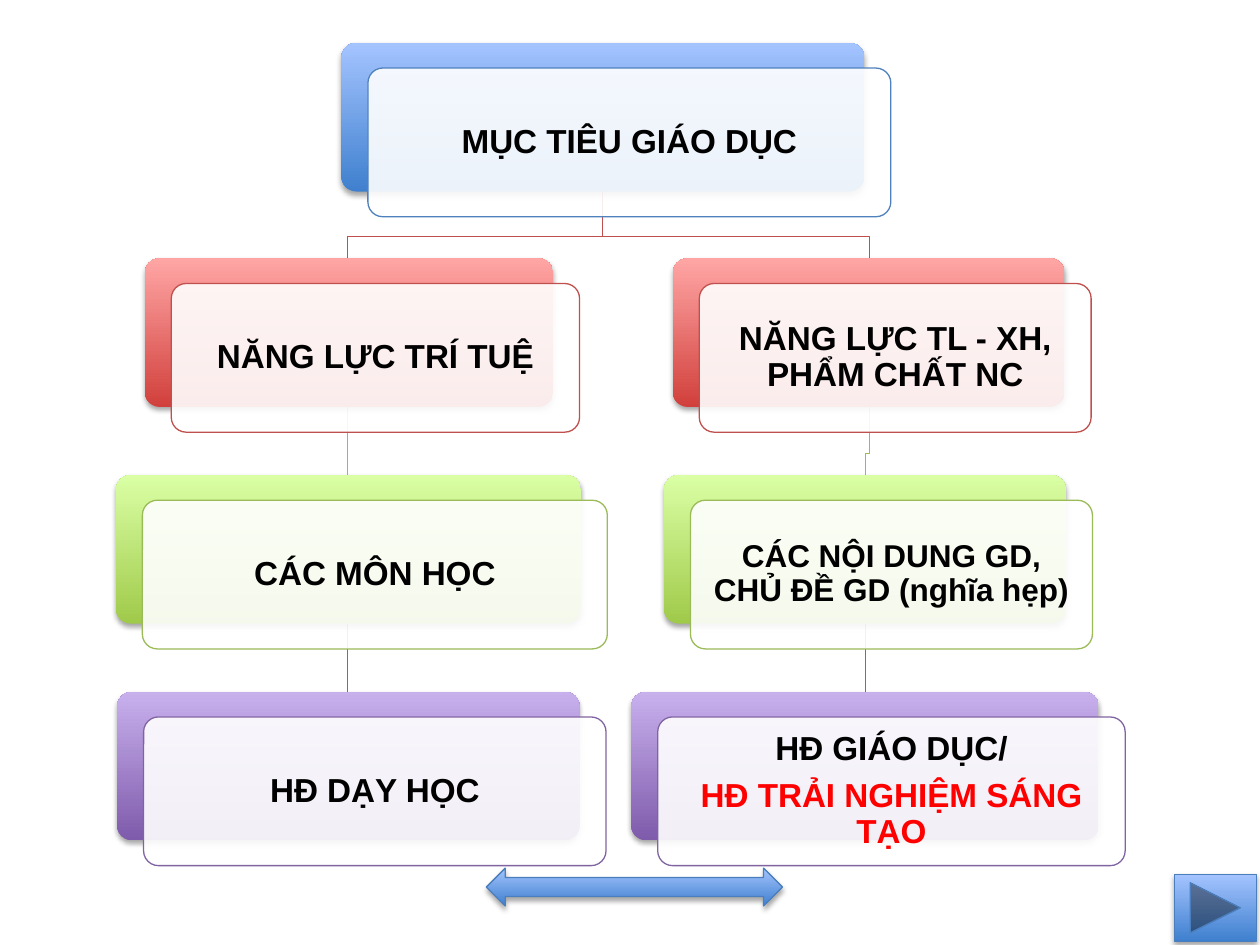
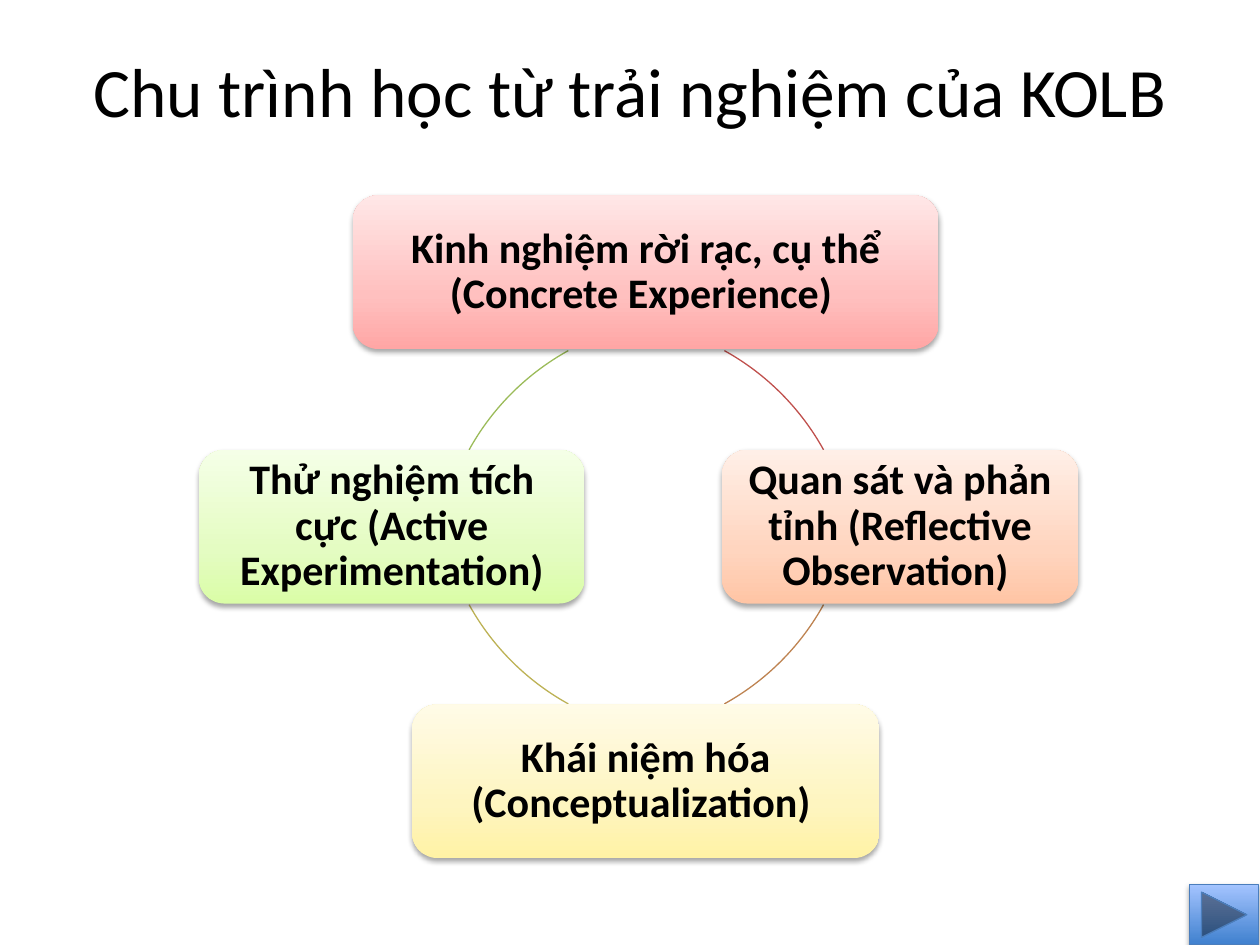
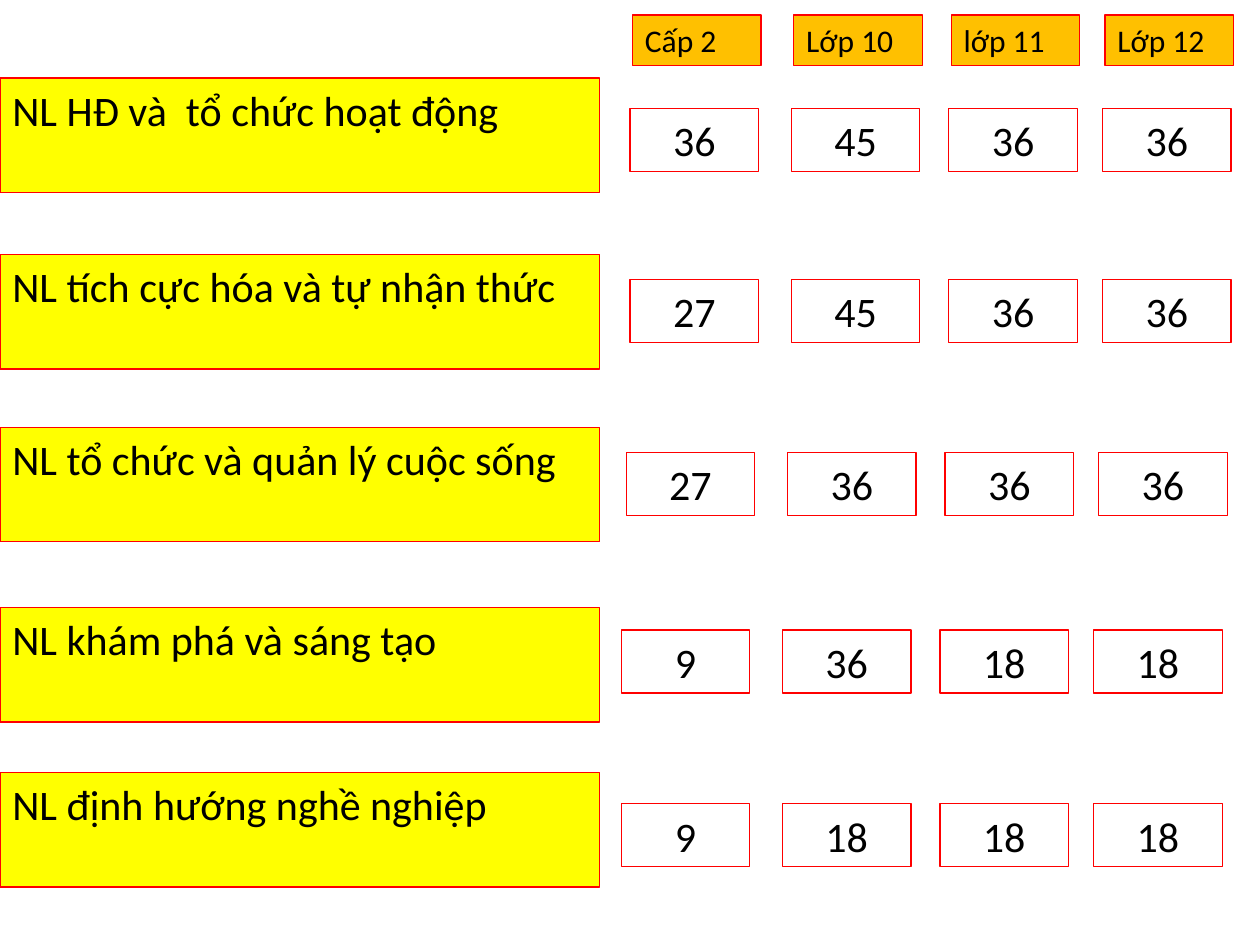
import lxml.etree
import pptx
import pptx.dml.color
import pptx.enum.shapes
import pptx.enum.text
import pptx.oxml.ns
import pptx.util

RGBColor = pptx.dml.color.RGBColor
Shapes = pptx.enum.shapes.MSO_SHAPE
Align = pptx.enum.text.PP_ALIGN
Anchor = pptx.enum.text.MSO_ANCHOR
qn = pptx.oxml.ns.qn

PX = 9144

BLACK = RGBColor(0x00, 0x00, 0x00)
WHITE = RGBColor(0xFF, 0xFF, 0xFF)
RED = RGBColor(0xFF, 0x00, 0x00)
YELLOW = RGBColor(0xFF, 0xFF, 0x00)
AMBER = RGBColor(0xFF, 0xC0, 0x00)

BLUE_LINE = RGBColor(0x4F, 0x81, 0xBD)
BUTTON_LINE = RGBColor(0x4B, 0x7E, 0xBC)
RED_LINE = RGBColor(0xC0, 0x50, 0x4D)
GREEN_LINE = RGBColor(0x9B, 0xBB, 0x59)
PURPLE_LINE = RGBColor(0x80, 0x64, 0xA2)
ORANGE_LINE = RGBColor(0xBE, 0x83, 0x51)
OLIVE_LINE = RGBColor(0xBD, 0xB2, 0x55)

BLUE_BLEND = [(0, RGBColor(0x3F, 0x80, 0xCE)), (100, RGBColor(0xA4, 0xC4, 0xFF))]
RED_BLEND = [(0, RGBColor(0xD1, 0x40, 0x3C)), (100, RGBColor(0xFF, 0xA6, 0xA5))]
GREEN_BLEND = [(0, RGBColor(0xA0, 0xCA, 0x4A)), (100, RGBColor(0xDA, 0xFF, 0xA5))]
PURPLE_BLEND = [(0, RGBColor(0x7F, 0x5B, 0xAB)), (100, RGBColor(0xC8, 0xB0, 0xED))]
PALE_RED = [(0, RGBColor(0xFF, 0xA6, 0xA5)), (35, RGBColor(0xFF, 0xC0, 0xBF)),
            (100, RGBColor(0xFF, 0xE7, 0xE7))]
PALE_ORANGE = [(0, RGBColor(0xFF, 0xC5, 0xA5)), (35, RGBColor(0xFF, 0xD5, 0xBF)),
               (100, RGBColor(0xFF, 0xEF, 0xE7))]
PALE_YELLOW = [(0, RGBColor(0xFF, 0xF2, 0xA5)), (35, RGBColor(0xFE, 0xF5, 0xC0)),
               (100, RGBColor(0xFF, 0xFB, 0xE7))]
PALE_GREEN = [(0, RGBColor(0xDA, 0xFD, 0xA7)), (35, RGBColor(0xE4, 0xFC, 0xC2)),
              (100, RGBColor(0xF5, 0xFF, 0xE7))]


def scaled(*lengths):
    return [pptx.util.Emu(length * PX) for length in lengths]


def set_line(shape, colour):
    if colour is None:
        shape.line.fill.background()
    else:
        shape.line.color.rgb = colour
        shape.line.width = pptx.util.Pt(0.75)


def add_colour(parent, colour, alpha=None):
    element = lxml.etree.SubElement(parent, qn("a:srgbClr"), val=str(colour))
    if alpha is not None:
        lxml.etree.SubElement(element, qn("a:alpha"), val=str(alpha * 1000))


def add_figure(page, kind, place, line=None):
    shape = page.shapes.add_shape(kind, *scaled(*place))
    shape.shadow.inherit = False
    set_line(shape, line)
    return shape


def add_solid(page, kind, place, colour, line=None):
    shape = add_figure(page, kind, place, line)
    shape.fill.solid()
    shape.fill.fore_color.rgb = colour
    return shape


def add_raised(page, kind, place, blend, line=None):
    shape = add_figure(page, kind, place, line)
    shape.fill.gradient()
    shape.fill.gradient_angle = 90
    properties = shape._element.spPr
    stops = properties.find(".//" + qn("a:gsLst"))
    stops.clear()
    for position, colour in blend:
        stop = lxml.etree.SubElement(stops, qn("a:gs"), pos=str(position * 1000))
        add_colour(stop, colour)
    shadow = lxml.etree.SubElement(
        properties.find(qn("a:effectLst")), qn("a:outerShdw"),
        blurRad=str(pptx.util.Pt(3.1)), dist=str(pptx.util.Pt(1.8)),
        dir="5400000", rotWithShape="0")
    add_colour(shadow, BLACK, 35)
    return shape


def format_para(para, text, size, font="Calibri", colour=BLACK, bold=False, align=Align.LEFT):
    para.text = text
    para.alignment = align
    para.font.name = font
    para.font.size = pptx.util.Pt(size)
    para.font.bold = bold
    para.font.color.rgb = colour


def write_diagram_text(shape, lines, size, font, margin):
    frame = shape.text_frame
    frame.word_wrap = True
    frame.vertical_anchor = Anchor.MIDDLE
    (frame.margin_left, frame.margin_top,
     frame.margin_right, frame.margin_bottom) = scaled(*[margin] * 4)
    for index, (text, colour) in enumerate(lines):
        para = frame.add_paragraph() if index else frame.paragraphs[0]
        format_para(para, text, size, font, colour, True, Align.CENTER)
        para.line_spacing = 0.9
        para.space_after = pptx.util.Pt(0.35 * size)


def add_card(page, left, top, width, blend, line, lines, size=19):
    back = add_raised(page, Shapes.ROUNDED_RECTANGLE, (left, top, width, 118), blend)
    front = add_solid(page, Shapes.ROUNDED_RECTANGLE,
                      (left + 21, top + 20, width, 118), WHITE, line)
    back.adjustments[0] = front.adjustments[0] = 0.1
    white = front._element.spPr.find(qn("a:solidFill")).find(qn("a:srgbClr"))
    lxml.etree.SubElement(white, qn("a:alpha"), val="90000")
    write_diagram_text(front, lines, size, "Arial", 8)


def add_straight_link(page, x, top, bottom, colour):
    link = page.shapes.add_connector(
        pptx.enum.shapes.MSO_CONNECTOR.STRAIGHT, *scaled(x, top, x, bottom))
    set_line(link, colour)
    lxml.etree.SubElement(link._element.spPr, qn("a:effectLst"))


def add_bent_link(page, start, middle, end, colour):
    builder = page.shapes.build_freeform(*start, scale=PX)
    builder.add_line_segments([(start[0], middle), (end[0], middle), end], close=False)
    link = builder.convert_to_shape()
    link.shadow.inherit = False
    link.fill.background()
    set_line(link, colour)


def add_arc(page, left, top, start, colour):
    arc = add_figure(page, Shapes.ARC, (left, top, 404, 404), colour)
    arc.fill.background()
    arc.adjustments[0] = start * 0.6
    arc.adjustments[1] = (start + 32) * 0.6


def add_next_button(page, place):
    add_raised(page, Shapes.ACTION_BUTTON_FORWARD_OR_NEXT, place, BLUE_BLEND, BUTTON_LINE)


def add_text_cell(page, place, text, colour, size, align=Align.LEFT):
    cell = add_solid(page, Shapes.RECTANGLE, place, colour, RED)
    cell.text_frame.word_wrap = True
    cell.text_frame.vertical_anchor = Anchor.TOP
    format_para(cell.text_frame.paragraphs[0], text, size, align=align)


def build_goals(deck):
    page = deck.slides.add_slide(deck.slide_layouts[6])
    goal_top, ability_top, content_top, activity_top = 34, 205, 377, 549
    for x in (276, 690):
        add_bent_link(page, (478, 152), 188, (x, ability_top), RED_LINE)
    add_straight_link(page, 276, 323, content_top, GREEN_LINE)
    add_bent_link(page, (690, 323), 360, (687, content_top), GREEN_LINE)
    for x in (276, 687):
        add_straight_link(page, x, 495, activity_top, PURPLE_LINE)

    add_card(page, 271, goal_top, 415, BLUE_BLEND, BLUE_LINE, [("MỤC TIÊU GIÁO DỤC", BLACK)])
    for left, width, text in ((115, 324, "NĂNG LỰC TRÍ TUỆ"),
                              (534, 311, "NĂNG LỰC TL - XH, PHẨM CHẤT NC")):
        add_card(page, left, ability_top, width, RED_BLEND, RED_LINE, [(text, BLACK)])
    for left, width, text, size in ((92, 369, "CÁC MÔN HỌC", 19),
                                    (527, 319, "CÁC NỘI DUNG GD, CHỦ ĐỀ GD (nghĩa hẹp)", 18)):
        add_card(page, left, content_top, width, GREEN_BLEND, GREEN_LINE, [(text, BLACK)], size)
    for left, width, lines in (
            (93, 367, [("HĐ DẠY HỌC", BLACK)]),
            (501, 371, [("HĐ GIÁO DỤC/", BLACK), ("HĐ TRẢI NGHIỆM SÁNG TẠO", RED)])):
        add_card(page, left, activity_top, width, PURPLE_BLEND, PURPLE_LINE, lines)

    add_raised(page, Shapes.LEFT_RIGHT_ARROW, (386, 689, 235, 30), BLUE_BLEND, BUTTON_LINE)
    add_next_button(page, (932, 694, 65, 53))


def build_cycle(deck):
    page = deck.slides.add_slide(deck.slide_layouts[5])
    title = page.shapes.title
    title.left, title.top, title.width, title.height = scaled(50, 30, 900, 83)
    title.text_frame.vertical_anchor = Anchor.MIDDLE
    format_para(title.text_frame.paragraphs[0], "Chu trình học từ trải nghiệm của KOLB",
                39.6, align=Align.CENTER)

    arcs = ((275, 253, RED_LINE), (275, 180, ORANGE_LINE),
            (347, 180, OLIVE_LINE), (347, 253, GREEN_LINE))
    for (left, top, colour), start in zip(arcs, (299, 29, 119, 209)):
        add_arc(page, left, top, start, colour)

    stages = (
        (280, 155, 465, PALE_RED, "Kinh nghiệm rời rạc, cụ thể (Concrete Experience) "),
        (573, 357, 283, PALE_ORANGE, "Quan sát và phản tỉnh (Reflective Observation) "),
        (327, 559, 371, PALE_YELLOW, "Khái niệm hóa (Conceptualization) "),
        (158, 357, 306, PALE_GREEN, "Thử nghiệm tích cực (Active Experimentation)"),
    )
    for left, top, width, blend, text in stages:
        stage = add_raised(page, Shapes.ROUNDED_RECTANGLE, (left, top, width, 122), blend)
        write_diagram_text(stage, [(text, BLACK)], 24, "Calibri", 10)
    add_next_button(page, (944, 702, 55, 48))


def build_hours(deck):
    page = deck.slides.add_slide(deck.slide_layouts[6])
    column_offsets = (0, 128, 253, 375)
    grades = ("Cấp 2", "Lớp 10", "lớp 11", "Lớp 12")
    abilities = (
        (62, "NL HĐ và  tổ chức hoạt động", 500, 86, (36, 45, 36, 36)),
        (202, "NL tích cực hóa và tự nhận thức", 500, 222, (27, 45, 36, 36)),
        (339, "NL tổ chức và quản lý cuộc sống", 497, 359, (27, 36, 36, 36)),
        (482, "NL khám phá và sáng tạo", 493, 500, (9, 36, 18, 18)),
        (613, "NL định hướng nghề nghiệp", 493, 638, (9, 18, 18, 18)),
    )
    for offset, grade in zip(column_offsets, grades):
        add_text_cell(page, (502 + offset, 12, 102, 40), grade, AMBER, 18)
    for label_top, label, left, top, hours in abilities:
        add_text_cell(page, (0, label_top, 476, 91), label, YELLOW, 24)
        for offset, value in zip(column_offsets, hours):
            add_text_cell(page, (left + offset, top, 102, 50), str(value), WHITE, 24,
                          Align.CENTER)


def main():
    deck = pptx.Presentation()
    deck.slide_width, deck.slide_height = scaled(1000, 750)
    build_goals(deck)
    build_cycle(deck)
    build_hours(deck)
    deck.save("out.pptx")


if __name__ == "__main__":
    main()
